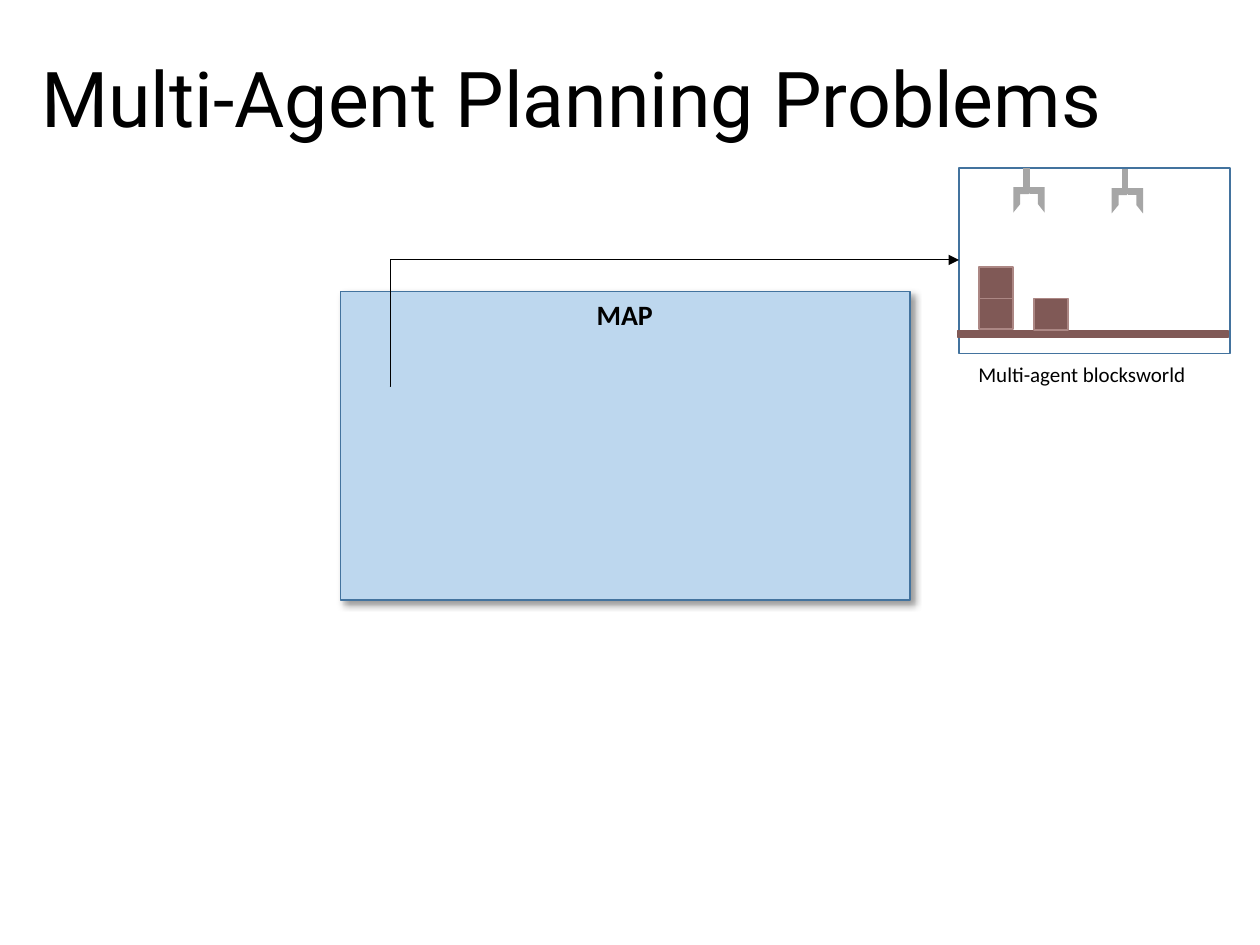
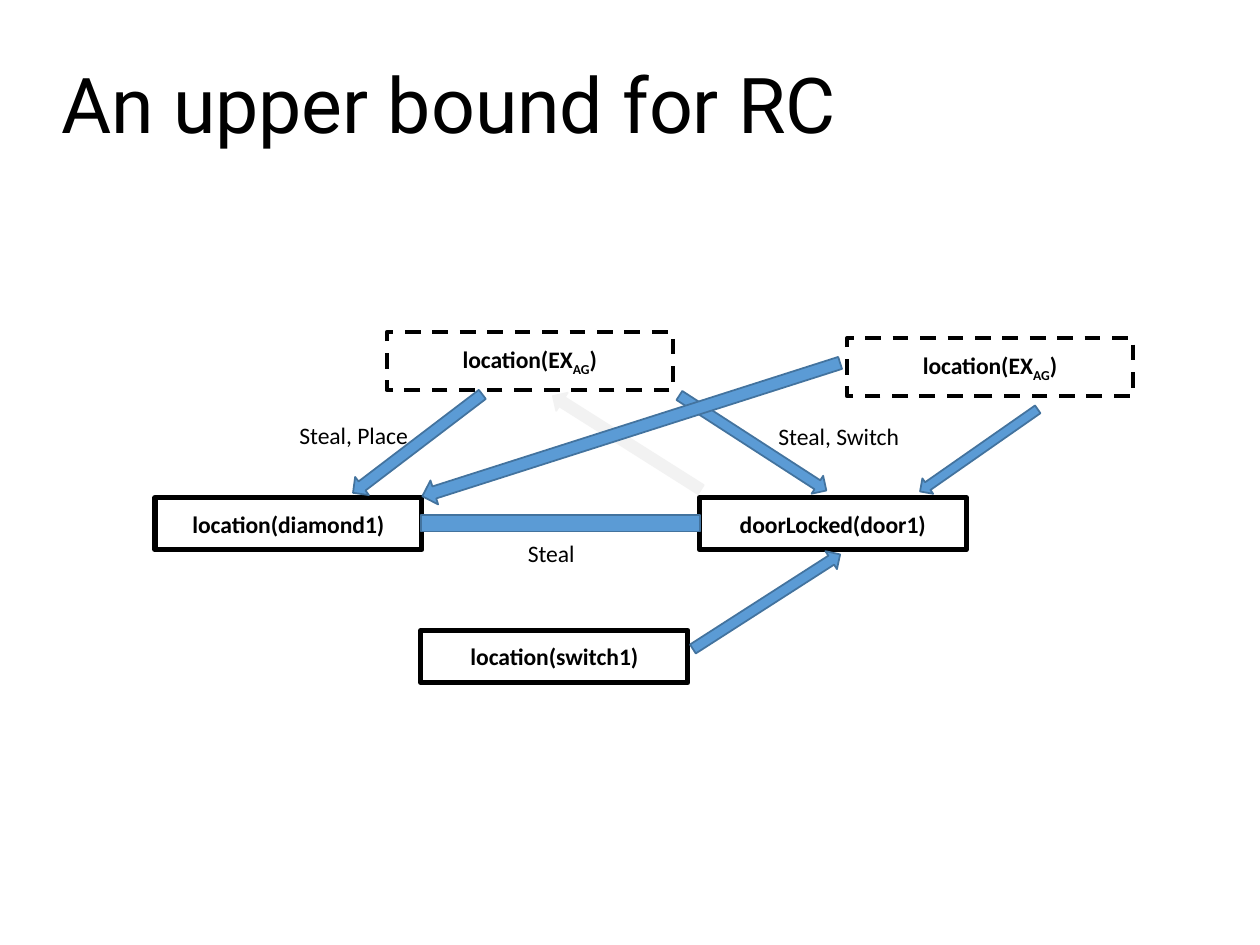
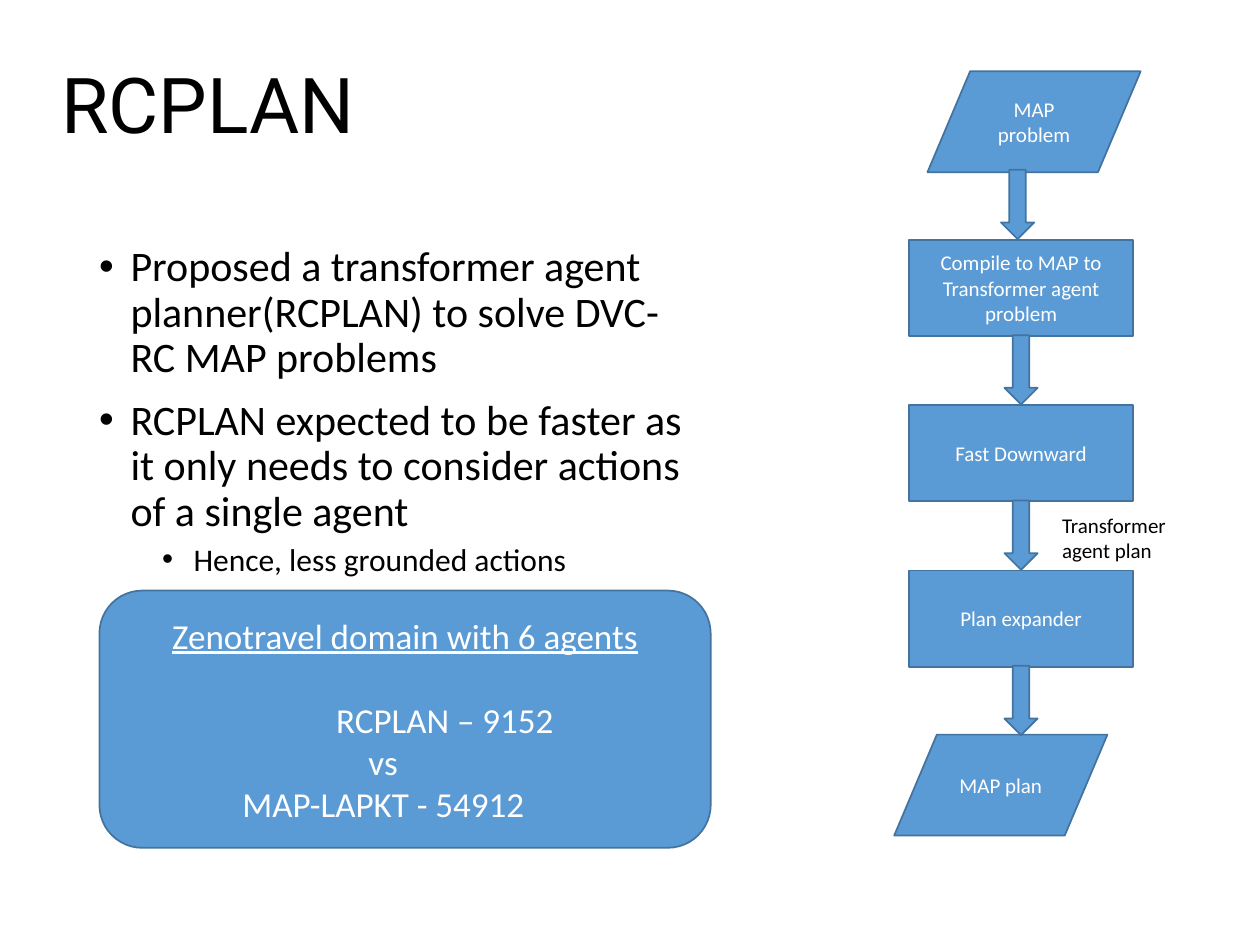
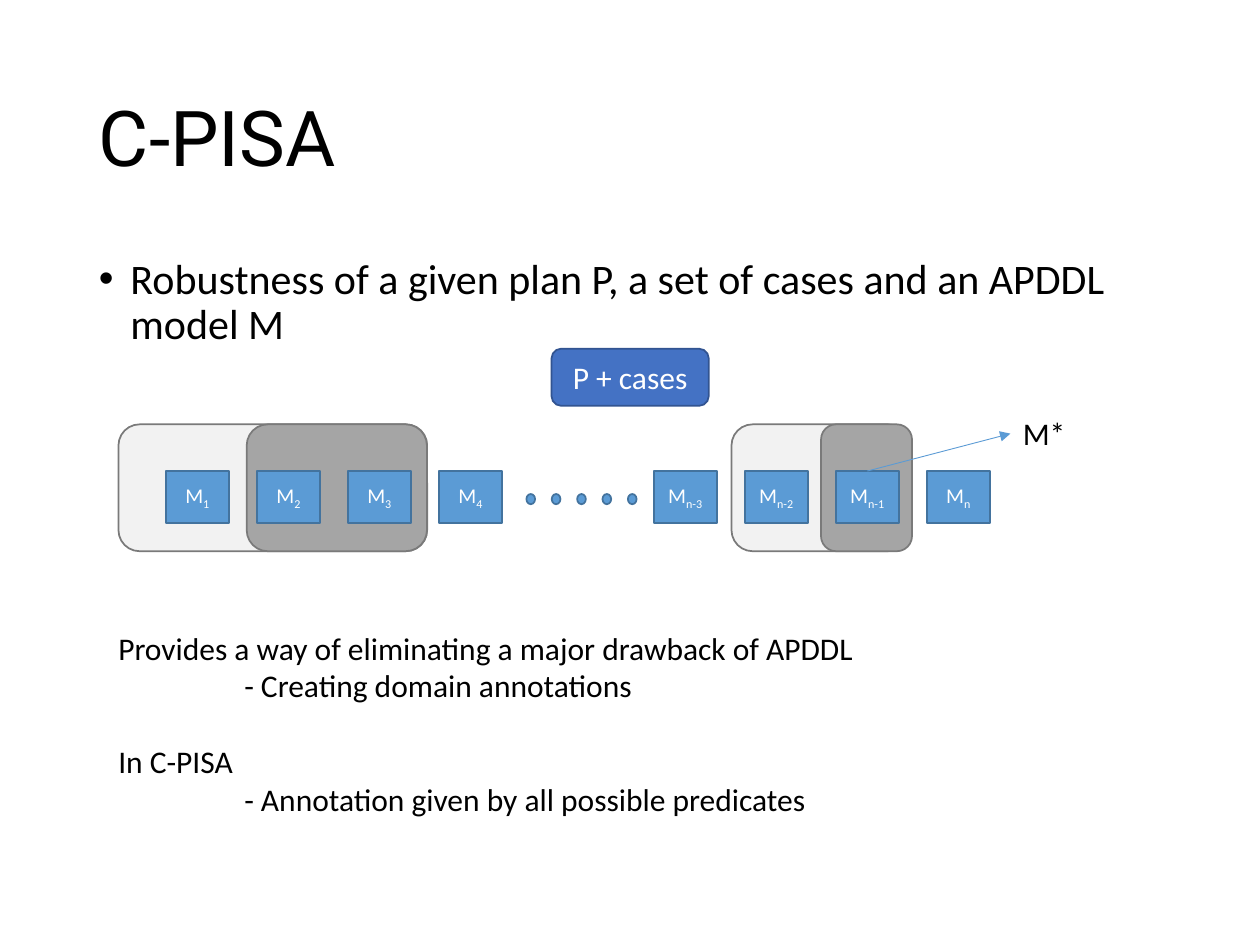
from dataclasses import dataclass

from lxml.etree import SubElement
from pptx import Presentation
from pptx.dml.color import RGBColor as RGB
from pptx.enum.dml import MSO_LINE as Dash
from pptx.enum.shapes import MSO_CONNECTOR as Link, MSO_SHAPE as Kind
from pptx.enum.text import MSO_ANCHOR as Anchor, PP_ALIGN as Align
from pptx.oxml.ns import qn
from pptx.util import Pt


@dataclass(frozen=True)
class Theme:
    ink: str = "000000"
    paper: str = "FFFFFF"
    blue: str = "5B9BD5"
    edge: str = "43739E"
    pale: str = "BDD7EE"
    royal: str = "4472C4"
    navy: str = "325491"
    brick: str = "805956"
    rose: str = "AC8784"
    steel: str = "A6A6A6"
    mist: str = "F2F2F2"
    ash: str = "A5A5A5"
    rim: str = "7A7A7A"
    head: str = "Roboto"
    body: str = "Calibri"
    title: float = 44
    main: float = 24
    big: float = 20
    sub: float = 18
    label: float = 16
    node: float = 13.5
    small: float = 12


look = Theme()


def draw(page, kind, place, fill=None, line=None, wide=1):
    """Add a shape, or a text box when kind is None; place is in points."""
    place = [Pt(n) for n in place]
    if kind is None:
        return page.shapes.add_textbox(*place)
    shape = page.shapes.add_shape(kind, *place)
    shape.shadow.inherit = False
    for part, tone in ((shape.fill, fill), (shape.line.fill, line)):
        if tone:
            part.solid()
            part.fore_color.rgb = RGB.from_string(tone)
        else:
            part.background()
    if line:
        shape.line.width = Pt(wide)
    return shape


def write(shape, lines, size, tone=look.ink, anchor=Anchor.TOP, align=Align.LEFT, lead=None, **font):
    """Fill a shape with (text, options) lines; text between underscores is subscript."""
    frame = shape.text_frame
    frame.word_wrap, frame.vertical_anchor = True, anchor
    lines = [(lines, {})] if isinstance(lines, str) else lines
    for i, (text, opts) in enumerate(lines):
        para = frame.add_paragraph() if i else frame.paragraphs[0]
        props = para._p.get_or_add_pPr()
        props.set("marL", str(Pt(opts.get("left", 0))))
        props.set("indent", str(Pt(opts.get("first", 0))))
        if "first" in opts:
            SubElement(props, qn("a:buFont")).set("typeface", "Arial")
            SubElement(props, qn("a:buChar")).set("char", "•")
        form = {"alignment": opts.get("align", align), "line_spacing": lead,
                "space_before": Pt(opts.get("gap", 0))}
        for name, value in form.items():
            setattr(para, name, value)
        for k, piece in enumerate(text.split("_")):
            if not piece:
                continue
            run = para.add_run()
            run.text = piece
            form = {"name": look.body, "size": Pt(opts.get("size", size)),
                    "underline": opts.get("under"), **font}
            for name, value in form.items():
                setattr(run.font, name, value)
            run.font.color.rgb = RGB.from_string(tone)
            if k % 2:
                run._r.get_or_add_rPr().set("baseline", "-25000")
    return shape


deck = Presentation()
deck.slide_width, deck.slide_height = Pt(720), Pt(540)
mid = {"anchor": Anchor.MIDDLE, "align": Align.CENTER}
white = {"tone": look.paper, **mid}
solid = {"fill": look.blue, "line": look.edge}

pages = []
for title, place in (
    ("Multi-Agent Planning Problems", (16.5, 10, 680, 97)),
    ("An upper bound for RC", (28, 9.5, 620.5, 104.5)),
    ("RCPLAN", (28, 9.5, 620.5, 104.5)),
    ("C-PISA", (49.5, 28.8, 620.5, 104.5)),
):
    page = deck.slides.add_slide(deck.slide_layouts[6])
    write(draw(page, None, place), title, look.title, anchor=Anchor.MIDDLE, lead=0.9, name=look.head)
    pages.append(page)
agents, bound, plan, pisa = pages

# Slide 1: blocksworld scene and MAP box
draw(agents, Kind.RECTANGLE, (548, 96, 155, 106), line=look.edge)
draw(agents, Kind.FLOWCHART_PROCESS, (547.2, 189, 154.8, 3.6), look.brick, look.brick)
for x, y in ((559.5, 170), (559.5, 152.5), (591, 170.5)):
    draw(agents, Kind.FLOWCHART_PROCESS, (x, y, 19.5, 18), look.brick, look.rose)
for x, y in ((579, 96), (635.2, 96.5)):
    draw(agents, Kind.HALF_FRAME, (x, y + 11, 12, 14.5), look.steel)
    claw = draw(agents, Kind.HALF_FRAME, (x + 6.5, y + 11, 11.5, 14.5), look.steel)
    claw._element.spPr.get_or_add_xfrm().set("flipH", "1")
    draw(agents, Kind.FLOWCHART_PROCESS, (x + 5.7, y, 3.6, 11.5), look.steel)

box = draw(agents, Kind.FLOWCHART_PROCESS, (194.5, 166.5, 325.5, 176.5), look.pale, look.edge)
glow = SubElement(box._element.spPr.find(qn("a:effectLst")), qn("a:outerShdw"))
for name, value in {"blurRad": Pt(4), "dist": Pt(3), "dir": 45 * 60000, "algn": "tl", "rotWithShape": 0}.items():
    glow.set(name, str(value))
tint = SubElement(glow, qn("a:srgbClr"))
tint.set("val", look.ink)
SubElement(tint, qn("a:alpha")).set("val", "40000")
write(draw(agents, None, (267, 166.5, 180, 26.5)), "MAP", look.label, align=Align.CENTER, bold=True)
write(draw(agents, None, (552, 203, 141, 21.5)), "Multi-agent blocksworld", look.small)

bend = agents.shapes.add_connector(Link.ELBOW, Pt(222.7), Pt(221), Pt(548), Pt(148.6))
guide = SubElement(bend._element.spPr.find(qn("a:prstGeom")).find(qn("a:avLst")), qn("a:gd"))
guide.set("name", "adj1")
guide.set("fmla", "val 100")

# Slide 2: causal graph
for text, x, y in (("location(diamond1)", 88.5, 284.4), ("doorLocked(door1)", 399.6, 284.4),
                   ("location(switch1)", 240.5, 360.3)):
    node = draw(bound, Kind.RECTANGLE, (x, y, 152.6, 29.7), look.paper, look.ink, 3)
    write(node, text, look.node, bold=True, **mid)
for x, y in ((221, 189.8), (484, 193.2)):
    node = draw(bound, Kind.RECTANGLE, (x, y, 163.5, 33.2), look.paper, look.ink, 2.25)
    node.line.dash_style = Dash.DASH
    write(node, "location(EX_AG_)", look.node, bold=True, **mid)
draw(bound, Kind.FLOWCHART_PROCESS, (240.5, 294.3, 159.5, 9.4), **solid)
for place, turn, fill, line in (
    ((308.2, 247, 100, 12.2), 32.3, look.mist, look.mist),
    ((192.2, 247, 92.9, 13), 322.7, look.blue, look.edge),
    ((380.2, 247, 100, 12.2), 212.9, look.blue, look.edge),
    ((388, 337.7, 100, 12.2), 147.3, look.blue, look.edge),
    ((235.4, 238.3, 250.6, 14.4), 342.3, look.blue, look.edge),
    ((518.4, 252, 82, 10.8), 325.1, look.blue, look.edge),
):
    draw(bound, Kind.LEFT_ARROW, place, fill, line).rotation = turn
for text, place in (("Steal, Place", (164, 237, 80, 24)), ("Steal, Switch", (437.7, 237.6, 95, 24)),
                    ("Steal", (294.5, 304.6, 90, 24))):
    write(draw(bound, None, place), text, look.node)

# Slide 3: points, result and flow
point = {"left": 18, "first": -18}
write(draw(plan, None, (49.5, 136.8, 359.3, 386.6)), [
    ("Proposed a transformer agent planner(RCPLAN) to solve DVC-RC MAP problems", point),
    ("RCPLAN expected to be faster as it only needs to consider actions of a single agent",
     {**point, "gap": 10}),
    ("Hence, less grounded actions", {"left": 54, "first": -18, "gap": 5, "size": look.sub}),
], look.main, lead=0.9)
write(draw(plan, Kind.ROUNDED_RECTANGLE, (56.8, 337.5, 349.3, 147), **solid), [
    ("Zenotravel domain with 6 agents", {"align": Align.CENTER, "under": True}),
    ("RCPLAN – 9152", {"left": 121, "gap": 24}),
    ("vs", {"left": 139.5}),
    ("MAP-LAPKT - 54912", {"left": 67.5}),
], look.big, look.paper, Anchor.MIDDLE)

step = 94.5
for text, x, y in (("MAP problem", 530, 40.8), ("MAP plan", 511, 419.8)):
    write(draw(plan, Kind.FLOWCHART_DATA, (x, y, 121.8, 57.6), **solid), text, look.small, **white)
for i, text in enumerate(("Compile to MAP to Transformer agent problem", "Fast Downward", "Plan expander")):
    stage = draw(plan, Kind.FLOWCHART_PROCESS, (519.6, 137 + i * step, 127.8, 55), **solid)
    write(stage, text, look.small, **white)
for i in range(4):
    draw(plan, Kind.DOWN_ARROW, (574 if i else 572, 97 + i * step, 19, 39.6), **solid)
write(draw(plan, None, (599.8, 289.2, 80.6, 36)), "Transformer agent plan", look.small)

# Slide 4: row of models
write(draw(pisa, None, (49.5, 144, 620.5, 342.7)),
      [("Robustness of a given plan P, a set of cases and an APDDL model M", point)], look.main, lead=0.9)
for x, w, fill in ((418, 101.5, look.mist), (469.2, 52, look.ash), (67.7, 176.4, look.mist), (141, 103, look.ash)):
    draw(pisa, Kind.ROUNDED_RECTANGLE, (x, 242.5, w, 72.5), fill, look.rim)
cells = {}
for start, marks in ((94.8, ("1", "2", "3", "4")), (373.6, ("n-3", "n-2", "n-1", "n"))):
    for i, mark in enumerate(marks):
        cell = draw(pisa, Kind.RECTANGLE, (start + i * 52, 269.2, 36, 29.6), **solid)
        cells[mark] = write(cell, f"M_{mark}_", look.small, **white)
for i in range(5):
    draw(pisa, Kind.OVAL, (300.8 + i * 14.5, 282.3, 5, 5.8), **solid)
case = draw(pisa, Kind.ROUNDED_RECTANGLE, (315.2, 199.3, 89.8, 32.6), look.royal, look.navy)
write(case, "P + cases", look.sub, **white)
write(draw(pisa, None, (60.5, 355.7, 500.4, 116.6)), [
    ("Provides a way of eliminating a major drawback of APDDL", {}),
    ("- Creating domain annotations", {"left": 72}),
    ("In C-PISA", {"gap": 21.5}),
    ("- Annotation given by all possible predicates", {"left": 72}),
], look.sub)
star = write(draw(pisa, None, (577.4, 233.3, 39.6, 29)), "M*", look.sub)
ray = pisa.shapes.add_connector(Link.STRAIGHT, 0, 0, 0, 0)
ray.begin_connect(cells["n-1"], 0)
ray.end_connect(star, 1)

for link, tone in ((bend, look.ink), (ray, look.blue)):
    link.line.color.rgb = RGB.from_string(tone)
    link.line.width = Pt(0.5)
    SubElement(link.line._get_or_add_ln(), qn("a:tailEnd")).set("type", "triangle")
    SubElement(link._element.spPr, qn("a:effectLst"))

deck.save("out.pptx")
